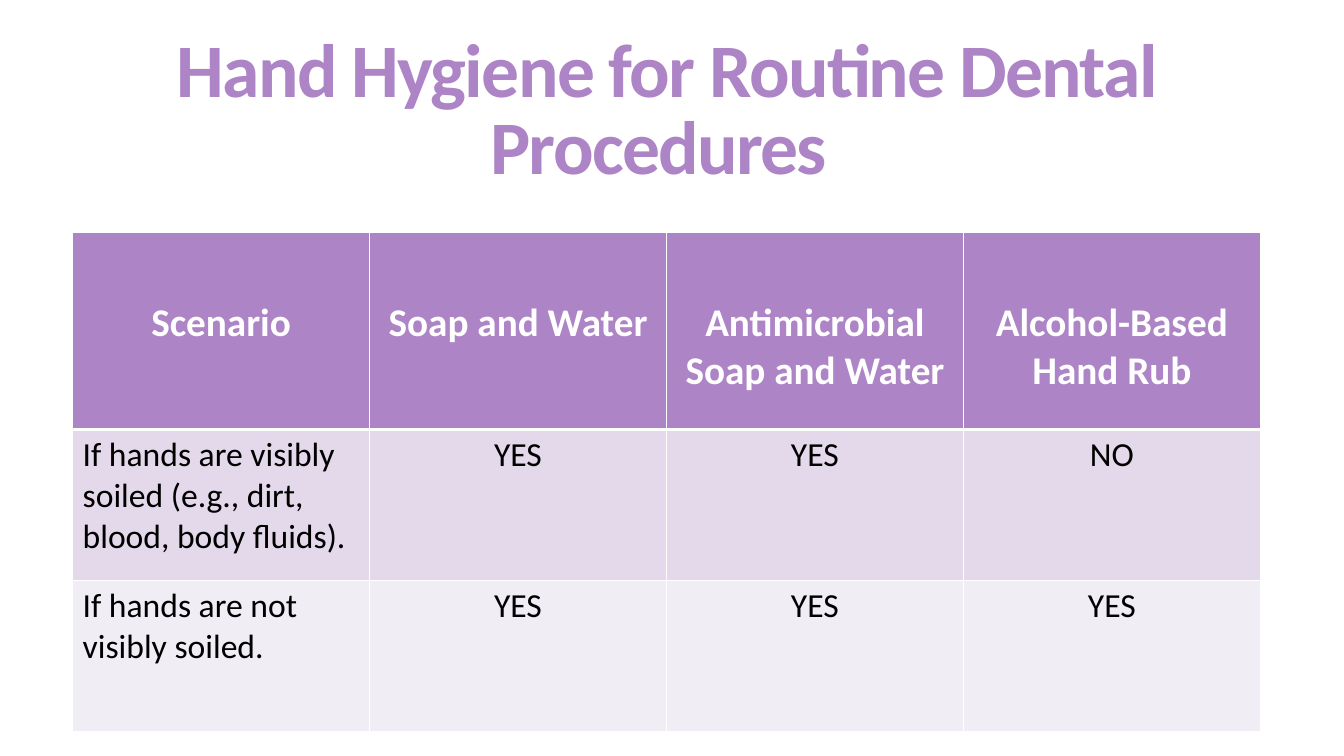
from lxml import etree
from pptx import Presentation
from pptx.dml.color import RGBColor
from pptx.enum.text import MSO_ANCHOR, PP_ALIGN
from pptx.oxml import parse_xml
from pptx.oxml.ns import nsdecls
from pptx.util import Inches, Pt

CENTER, LEFT = PP_ALIGN.CENTER, PP_ALIGN.LEFT
MIDDLE = MSO_ANCHOR.MIDDLE
PURPLE = RGBColor(0xAD, 0x84, 0xC6)
LILAC = RGBColor(0xE3, 0xD9, 0xEA)
PALE = RGBColor(0xF1, 0xED, 0xF5)
WHITE = RGBColor(0xFF, 0xFF, 0xFF)
BLACK = RGBColor(0, 0, 0)
FONT = "Calibri"
MARGIN, WIDTH = 0.72, 11.78
ROW_HEIGHTS = (1.95, 1.5, 1.5)
ROW_FILLS = (PURPLE, LILAC, PALE)
ROWS = (
    ("Scenario", "Soap and Water", "Antimicrobial Soap and Water",
     "Alcohol-Based Hand Rub"),
    ("If hands are visibly soiled (e.g., dirt, blood, body fluids).",
     "YES", "YES", "NO"),
    ("If hands are not visibly soiled.", "YES", "YES", "YES"),
)


def set_text(tf, text, size, color, bold, align):
    """Write one formatted paragraph and return it."""
    tf.text = text
    p = tf.paragraphs[0]
    p.alignment = align
    font = p.runs[0].font
    font.name, font.size, font.bold = FONT, Pt(size), bold
    font.color.rgb = color
    return p


def add_title(slide, text):
    """Add the centred slide title."""
    box = slide.shapes.add_textbox(
        Inches(MARGIN), Inches(0.15), Inches(WIDTH), Inches(1.94))
    tf = box.text_frame
    tf.word_wrap = True
    tf.vertical_anchor = MIDDLE
    p = set_text(tf, text, 54, PURPLE, True, CENTER)
    p.line_spacing = 0.85
    p.runs[0].font._element.set("spc", "-120")


def set_borders(cell, top, bottom):
    """Draw white cell borders with the given top and bottom widths."""
    tc_pr = cell._tc.get_or_add_tcPr()
    for side, width in (("L", 1), ("R", 1), ("T", top), ("B", bottom)):
        line = parse_xml(f'<a:ln{side} {nsdecls("a")} w="{Pt(width)}"/>')
        fill = etree.SubElement(line, line.tag.split("}")[0] + "}solidFill")
        etree.SubElement(fill, line.tag.split("}")[0] + "}srgbClr",
                         val=str(WHITE))
        tc_pr.append(line)


def add_hygiene_table(slide):
    """Add the table of scenarios and hand hygiene methods."""
    columns = len(ROWS[0])
    table = slide.shapes.add_table(
        len(ROWS), columns, Inches(MARGIN), Inches(2.31),
        Inches(WIDTH), Inches(sum(ROW_HEIGHTS))).table
    for column in table.columns:
        column.width = Inches(WIDTH / columns)
    for i, texts in enumerate(ROWS):
        header = i == 0
        table.rows[i].height = Inches(ROW_HEIGHTS[i])
        for j, text in enumerate(texts):
            cell = table.cell(i, j)
            set_borders(cell, 3 if i == 1 else 1, 3 if header else 1)
            cell.fill.solid()
            cell.fill.fore_color.rgb = ROW_FILLS[i]
            cell.margin_top = Inches(0.66 if header else 0.05)
            set_text(cell.text_frame, text, 28 if header else 24,
                     WHITE if header else BLACK, header,
                     CENTER if header or j else LEFT)


def main():
    """Build and save the slide."""
    prs = Presentation()
    prs.slide_width, prs.slide_height = Inches(13.33), Inches(7.5)
    slide = prs.slides.add_slide(prs.slide_layouts[6])
    add_title(slide, "Hand Hygiene for Routine Dental Procedures ")
    add_hygiene_table(slide)
    prs.save("out.pptx")


if __name__ == "__main__":
    main()
